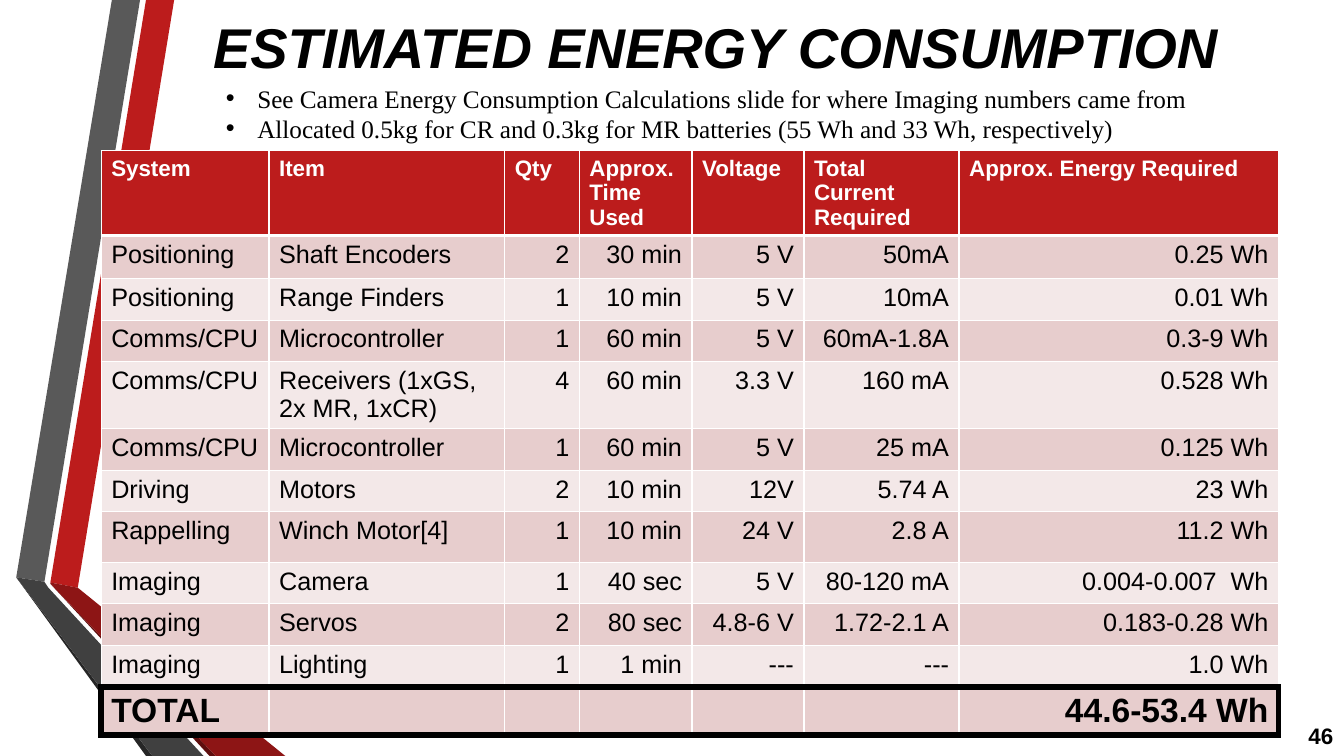
from lxml.etree import SubElement
from pptx import Presentation
from pptx.dml.color import RGBColor
from pptx.enum.text import MSO_ANCHOR, MSO_AUTO_SIZE, PP_ALIGN
from pptx.oxml.ns import qn
from pptx.util import Cm, Pt

RED, BLACK, WHITE = "BC1C1C", "000000", "FFFFFF"
BAND_FILLS = ["F3E8E8", "E7CDCD"]

RIBBONS = [
    (RED, [(1.27, 14.68), (1.96, 14.81), (4.39, 0), (3.68, 0)]),
    ("595959", [(3.53, 0), (2.82, 0), (0.41, 14.55), (1.12, 14.66)]),
    ("262626", [(0.41, 14.55), (3.68, 19.05), (3.84, 19.05)]),
    ("5E0E0E", [(1.27, 14.71), (5.28, 19.05), (5.44, 19.05)]),
    ("8D1515", [(1.27, 14.71), (5.44, 19.05), (7.19, 19.05), (1.96, 14.81), (1.27, 14.68)]),
    ("404040", [(5.13, 19.05), (1.22, 14.81), (1.12, 14.66), (0.41, 14.55), (3.84, 19.05)]),
]

NOTES = [
    "See Camera Energy Consumption Calculations slide for where Imaging numbers came from",
    "Allocated 0.5kg for CR and 0.3kg for MR batteries (55 Wh and 33 Wh, respectively)",
]

COLUMN_WIDTHS = [4.23, 5.94, 1.88, 2.84, 2.82, 3.91, 8.05]
ROW_HEIGHTS = [2.1, 1.08, 1.05, 1.05, 1.68, 1.05, 1.05, 1.27, 1.05, 1.05, 1.05, 1.2]
ENERGY_ROWS = [
    ["System", "Item", "Qty", "Approx.\vTime Used", "Voltage", "Total Current Required",
     "Approx. Energy Required"],
    ["Positioning", "Shaft Encoders", "2", "30 min", "5 V", "50mA", "0.25 Wh"],
    ["Positioning", "Range Finders", "1", "10 min", "5 V", "10mA", "0.01 Wh"],
    ["Comms/CPU", "Microcontroller", "1", "60 min", "5 V", "60mA-1.8A", "0.3-9 Wh"],
    ["Comms/CPU", "Receivers (1xGS, 2x MR, 1xCR)", "4", "60 min", "3.3 V", "160 mA", "0.528 Wh"],
    ["Comms/CPU", "Microcontroller", "1", "60 min", "5 V", "25 mA", "0.125 Wh"],
    ["Driving", "Motors", "2", "10 min", "12V", "5.74 A", "23 Wh"],
    ["Rappelling", "Winch Motor[4]", "1", "10 min", "24 V", "2.8 A", "11.2 Wh"],
    ["Imaging", "Camera", "1", "40 sec", "5 V", "80-120 mA", "0.004-0.007  Wh"],
    ["Imaging", "Servos", "2", "80 sec", "4.8-6 V", "1.72-2.1 A", "0.183-0.28 Wh"],
    ["Imaging", "Lighting", "1", "1 min", "---", "---", "1.0 Wh"],
    ["TOTAL", "", "", "", "", "", "44.6-53.4 Wh"],
]
TOTAL_ROW = len(ENERGY_ROWS) - 1


def color(value):
    """Turn a hex string into a colour."""
    return RGBColor.from_string(value)


def place(shape, left, top, width, height):
    """Move and size a shape, in centimetres."""
    box = {"left": left, "top": top, "width": width, "height": height}
    for name, value in box.items():
        setattr(shape, name, Cm(value))


def write(para, text, size, hue=BLACK, align=PP_ALIGN.LEFT, **formats):
    """Fill one paragraph with a formatted text."""
    para.text = text
    para.alignment = align
    formats = {"name": "Arial", "size": Pt(size), **formats}
    for name, value in formats.items():
        setattr(para.font, name, value)
        for span in para.runs:
            setattr(span.font, name, value)
    for span in para.runs:
        span.font.color.rgb = color(hue)


def add_ribbon(page, fill, points):
    """Draw one filled polygon of the side ribbon."""
    corners = [(Cm(x), Cm(y)) for x, y in points]
    builder = page.shapes.build_freeform(*corners[0])
    builder.add_line_segments(corners[1:], close=True)
    ribbon = builder.convert_to_shape()
    ribbon.shadow.inherit = False
    ribbon.fill.solid()
    ribbon.fill.fore_color.rgb = color(fill)
    ribbon.line.fill.background()


def fill_title(page):
    """Place and write the title."""
    title = page.shapes.title
    place(title, 4.11, 0.05, 27.84, 2.24)
    frame = title.text_frame
    frame.auto_size = MSO_AUTO_SIZE.NONE
    frame.vertical_anchor = MSO_ANCHOR.MIDDLE
    write(frame.paragraphs[0], "ESTIMATED ENERGY CONSUMPTION", 40,
          align=PP_ALIGN.CENTER, bold=True, italic=True)


def fill_notes(page):
    """Place and write the bulleted list."""
    body = page.placeholders[1]
    place(body, 5.44, 1.96, 26, 2.57)
    frame = body.text_frame
    frame.auto_size = MSO_AUTO_SIZE.NONE
    for index, note in enumerate(NOTES):
        para = frame.add_paragraph() if index else frame.paragraphs[0]
        write(para, note, 18, name="Times New Roman")
        para.space_before = Pt(0)
        properties = para._p.get_or_add_pPr()
        properties.set("marL", str(Cm(0.79)))
        properties.set("indent", str(-Cm(0.79)))


def horizontal_border(edge):
    """Give colour and width of the rule above row number edge."""
    if edge >= TOTAL_ROW:
        return BLACK, 4.5
    return WHITE, 3 if edge == 1 else 1


def vertical_border(row, edge):
    """Give colour and width of the rule left of column number edge."""
    outer = edge in (0, len(COLUMN_WIDTHS))
    return (BLACK, 4.5) if row == TOTAL_ROW and outer else (WHITE, 1)


def set_borders(cell, row, column):
    """Draw the four borders of a cell."""
    borders = {
        "a:lnL": vertical_border(row, column),
        "a:lnR": vertical_border(row, column + 1),
        "a:lnT": horizontal_border(row),
        "a:lnB": horizontal_border(row + 1),
    }
    properties = cell._tc.get_or_add_tcPr()
    for tag, (hue, width) in borders.items():
        line = SubElement(properties, qn(tag), w=str(Pt(width)))
        solid = SubElement(line, qn("a:solidFill"))
        SubElement(solid, qn("a:srgbClr"), val=hue)


def fill_cell(cell, text, row, column):
    """Write and format one table cell."""
    header, total = row == 0, row == TOTAL_ROW
    set_borders(cell, row, column)
    cell.fill.solid()
    cell.fill.fore_color.rgb = color(RED if header else BAND_FILLS[row % 2])
    size = 16 if header else 24 if total and text else 18
    align = PP_ALIGN.RIGHT if column > 1 and not header else PP_ALIGN.LEFT
    write(cell.text_frame.paragraphs[0], text, size, WHITE if header else BLACK,
          align, bold=header or total)


def add_energy_table(page):
    """Add the table of energy demands."""
    frame = page.shapes.add_table(
        len(ROW_HEIGHTS), len(COLUMN_WIDTHS), Cm(2.55), Cm(3.8),
        Cm(sum(COLUMN_WIDTHS)), Cm(sum(ROW_HEIGHTS)))
    table = frame.table
    for column, width in zip(table.columns, COLUMN_WIDTHS):
        column.width = Cm(width)
    for row, height in zip(table.rows, ROW_HEIGHTS):
        row.height = Cm(height)
    for row, texts in enumerate(ENERGY_ROWS):
        for column, text in enumerate(texts):
            fill_cell(table.cell(row, column), text, row, column)


def add_page_number(page):
    """Add the page number in the corner."""
    box = page.shapes.add_textbox(Cm(32.33), Cm(18.03), Cm(1.52), Cm(1.02))
    box.text_frame.word_wrap = True
    box.text_frame.vertical_anchor = MSO_ANCHOR.MIDDLE
    write(box.text_frame.paragraphs[0], "46", 16, align=PP_ALIGN.RIGHT, bold=True)


def main():
    """Build and save the deck."""
    deck = Presentation()
    deck.slide_width, deck.slide_height = Cm(33.87), Cm(19.05)
    page = deck.slides.add_slide(deck.slide_layouts[1])
    for fill, points in RIBBONS:
        add_ribbon(page, fill, points)
    fill_title(page)
    fill_notes(page)
    add_energy_table(page)
    add_page_number(page)
    deck.save("out.pptx")


if __name__ == "__main__":
    main()
